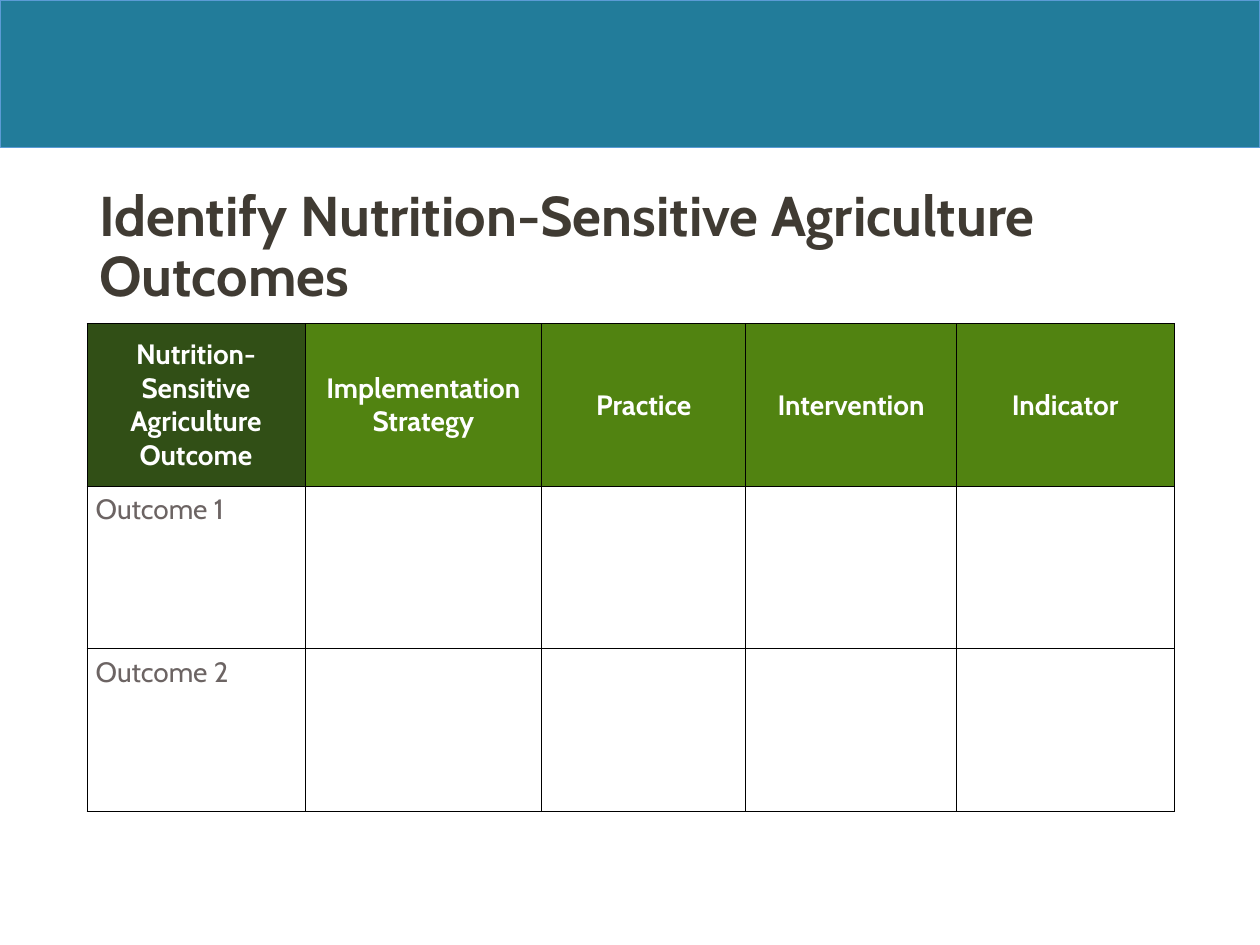
from dataclasses import dataclass

from lxml import etree
from pptx import Presentation
from pptx.dml.color import RGBColor
from pptx.enum.shapes import MSO_SHAPE
from pptx.enum.text import MSO_ANCHOR, PP_ALIGN
from pptx.oxml.ns import qn
from pptx.util import Inches, Pt

RECT = MSO_SHAPE.RECTANGLE
TOP, MIDDLE = MSO_ANCHOR.TOP, MSO_ANCHOR.MIDDLE
LEFT, CENTER = PP_ALIGN.LEFT, PP_ALIGN.CENTER


@dataclass(frozen=True)
class Theme:
    font: str = "Cabin"
    title_size: int = 32
    table_size: int = 16
    band: str = "227C9A"
    band_line: str = "5B9BD5"
    title: str = "403B33"
    first_header: str = "314F16"
    header: str = "518311"
    header_text: str = "FFFFFF"
    body_text: str = "6C6463"
    border: str = "000000"
    line_width: float = 0.5


THEME = Theme()
MARGIN, CONTENT_WIDTH = 0.69, 8.62
HEADERS = [
    "Nutrition-Sensitive Agriculture Outcome",
    "Implementation Strategy",
    "Practice",
    "Intervention",
    "Indicator",
]
OUTCOMES = ["Outcome 1", "Outcome 2"]
COLUMN_WIDTHS = [1.73, 1.88, 1.62, 1.67, 1.73]
ROW_HEIGHT = 1.29


def rgb(value):
    return RGBColor.from_string(value)


def set_font(p, size, color, bold):
    p.font.name = THEME.font
    p.font.size = Pt(size)
    p.font.bold = bold
    p.font.color.rgb = rgb(color)


def add_band(s):
    sp = s.shapes.add_shape(RECT, 0, 0, Inches(10), Inches(1.17))
    sp.shadow.inherit = False
    sp.fill.solid()
    sp.fill.fore_color.rgb = rgb(THEME.band)
    sp.line.color.rgb = rgb(THEME.band_line)
    sp.line.width = Pt(THEME.line_width)


def add_title(s, text):
    sp = s.shapes.add_textbox(Inches(MARGIN), Inches(1.37), Inches(CONTENT_WIDTH), Inches(1.2))
    tf = sp.text_frame
    tf.word_wrap = True
    tf.vertical_anchor = MIDDLE
    p = tf.paragraphs[0]
    p.text = text
    p.line_spacing = 0.9
    set_font(p, THEME.title_size, THEME.title, True)


def set_borders(cell):
    """Draw all four edges; they must come before the fill in the cell XML."""
    tc_pr = cell._tc.get_or_add_tcPr()
    for i, side in enumerate(("lnL", "lnR", "lnT", "lnB")):
        ln = etree.Element(qn(f"a:{side}"), w=str(Pt(THEME.line_width)))
        fill = etree.SubElement(ln, qn("a:solidFill"))
        etree.SubElement(fill, qn("a:srgbClr"), val=THEME.border)
        tc_pr.insert(i, ln)


def format_cell(cell, text, color, fill=None):
    """Style a cell; one with a fill is a header."""
    is_header = fill is not None
    cell.margin_left = cell.margin_right = Inches(0.07)
    cell.margin_top = cell.margin_bottom = Inches(0.05)
    cell.vertical_anchor = MIDDLE if is_header else TOP
    if is_header:
        cell.fill.solid()
        cell.fill.fore_color.rgb = rgb(fill)
    else:
        cell.fill.background()
    p = cell.text_frame.paragraphs[0]
    p.text = text
    p.alignment = CENTER if is_header else LEFT
    if is_header:
        p.space_after = Pt(10)
    set_font(p, THEME.table_size, color, is_header)
    set_borders(cell)


def add_outcome_table(s):
    rows = len(OUTCOMES) + 1
    frame = s.shapes.add_table(rows, len(HEADERS), Inches(MARGIN), Inches(2.57),
                               Inches(CONTENT_WIDTH), Inches(ROW_HEIGHT * rows))
    table = frame.table
    table.horz_banding = False
    for column, width in zip(table.columns, COLUMN_WIDTHS):
        column.width = Inches(width)
    for row in table.rows:
        row.height = Inches(ROW_HEIGHT)
    for c, header in enumerate(HEADERS):
        fill = THEME.header if c else THEME.first_header
        format_cell(table.cell(0, c), header, THEME.header_text, fill)
        for r, outcome in enumerate(OUTCOMES, 1):
            format_cell(table.cell(r, c), "" if c else outcome, THEME.body_text)


def main():
    prs = Presentation()
    prs.slide_width, prs.slide_height = Inches(10), Inches(7.5)
    s = prs.slides.add_slide(prs.slide_layouts[6])
    add_band(s)
    add_outcome_table(s)
    add_title(s, "Identify Nutrition-Sensitive Agriculture Outcomes")
    prs.save("out.pptx")


if __name__ == "__main__":
    main()
